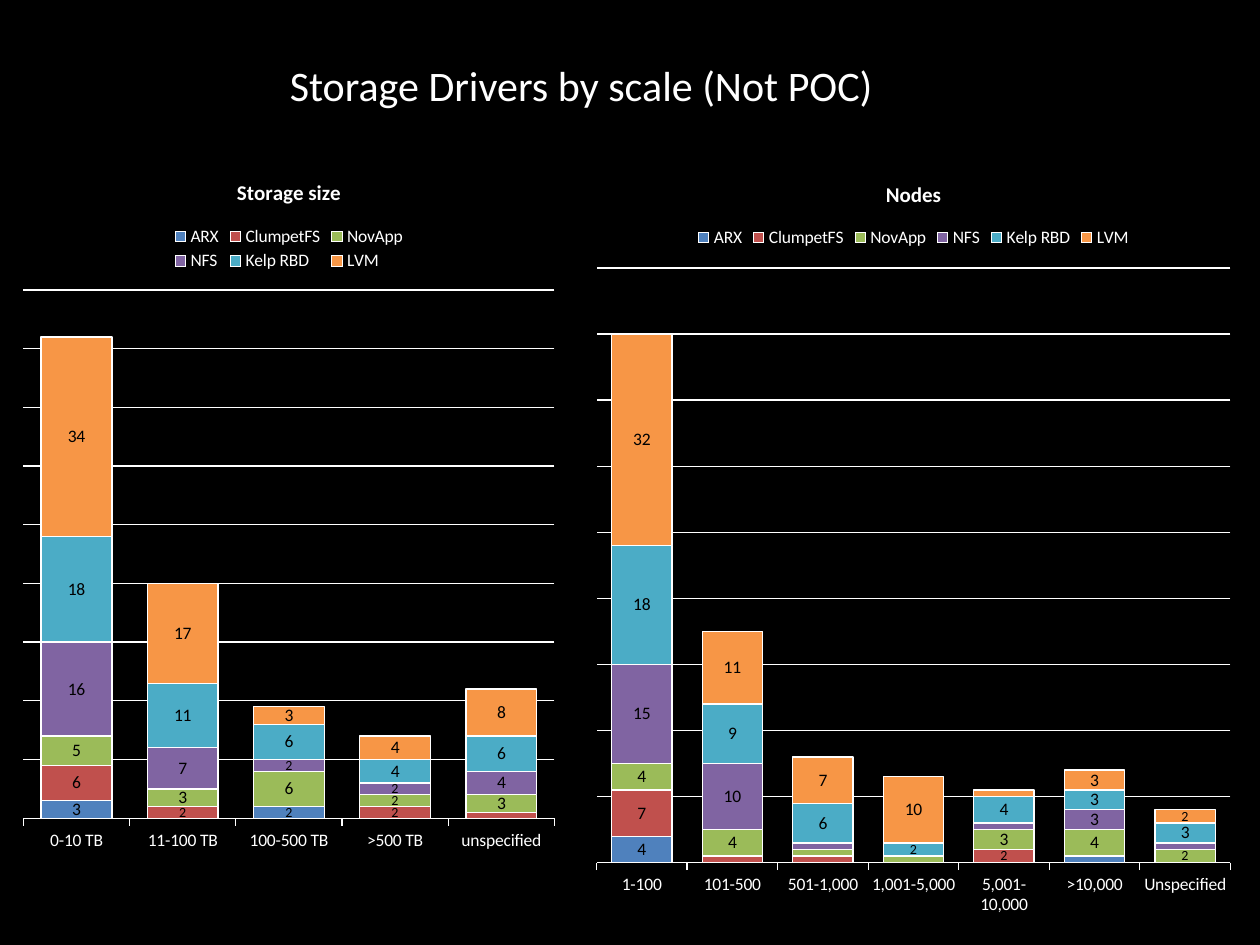
from lxml import etree
from pptx import Presentation
from pptx import util as u
from pptx.chart.data import CategoryChartData
from pptx.dml.color import RGBColor
from pptx.enum import chart as charts, text
from pptx.oxml.ns import qn

BLACK = RGBColor(0x00, 0x00, 0x00)
WHITE = RGBColor(0xFF, 0xFF, 0xFF)
FONT = "Calibri"
DRIVERS = {
    "ARX": RGBColor(0x4F, 0x81, 0xBD),
    "ClumpetFS": RGBColor(0xC0, 0x50, 0x4D),
    "NovApp": RGBColor(0x9B, 0xBB, 0x59),
    "NFS": RGBColor(0x80, 0x64, 0xA2),
    "Kelp RBD": RGBColor(0x4B, 0xAC, 0xC6),
    "LVM": RGBColor(0xF7, 0x96, 0x46),
}
STORAGE = {
    "0-10 TB": (3, 6, 5, 16, 18, 34),
    "11-100 TB": (None, 2, 3, 7, 11, 17),
    "100-500 TB": (2, None, 6, 2, 6, 3),
    ">500 TB": (None, 2, 2, 2, 4, 4),
    "unspecified": (None, 1, 3, 4, 6, 8),
}
NODES = {
    "1-100": (4, 7, 4, 15, 18, 32),
    "101-500": (None, 1, 4, 10, 9, 11),
    "501-1,000": (None, 1, 1, 1, 6, 7),
    "1,001-5,000": (None, None, 1, None, 2, 10),
    "5,001-10,000": (None, 2, 3, 1, 4, 1),
    ">10,000": (1, None, 4, 3, 3, 3),
    "Unspecified": (None, None, 2, 1, 3, 2),
}


def style_font(font, size, color, bold=False):
    """Apply the slide's typeface with a size, colour and weight."""
    font.name, font.size, font.bold = FONT, u.Pt(size), bold
    font.color.rgb = color


def style_line(line, width=0.75):
    """Make a line solid white."""
    line.color.rgb = WHITE
    line.width = u.Pt(width)


def set_title(page, words):
    """Place and format the title placeholder."""
    box = page.shapes.title
    box.left, box.top, box.width, box.height = (
        u.Cm(5.49), u.Cm(1.07), u.Cm(12.45), u.Cm(1.27))
    frame = box.text_frame
    frame.word_wrap = False
    frame.auto_size = text.MSO_AUTO_SIZE.SHAPE_TO_FIT_TEXT
    frame.vertical_anchor = text.MSO_ANCHOR.TOP
    para = frame.paragraphs[0]
    para.alignment = text.PP_ALIGN.CENTER
    span = para.add_run()
    span.text = words
    style_font(span.font, 24, WHITE)


def hide_label(series, index):
    """Delete the label of one point."""
    style_font(series.points[index].data_label.font, 10, BLACK)
    label = series._element.xpath(f"c:dLbls/c:dLbl[c:idx/@val='{index}']")[0]
    for child in label[1:]:
        label.remove(child)
    etree.SubElement(label, qn("c:delete")).set("val", "1")


def style_series(series):
    """Colour a series, with small labels for twos and none for ones."""
    series.format.fill.solid()
    series.format.fill.fore_color.rgb = DRIVERS[series.name]
    style_line(series.format.line)
    series.data_labels.show_value = True
    style_font(series.data_labels.font, 10, BLACK)
    for index, value in enumerate(series.values):
        if value == 1:
            hide_label(series, index)
        elif value == 2:
            style_font(series.points[index].data_label.font, 8, BLACK)


def style_axes(chart):
    """Show categories and white gridlines, and hide the value axis."""
    values, categories = chart.value_axis, chart.category_axis
    values.minimum_scale, values.maximum_scale, values.major_unit = 0, 90, 10
    values.has_major_gridlines = True
    style_line(values.major_gridlines.format.line)
    values.visible = False
    categories.major_tick_mark = charts.XL_TICK_MARK.OUTSIDE
    style_line(categories.format.line)
    style_font(categories.tick_labels.font, 10, WHITE)


def add_stacked_chart(page, heading, table, left, width, height):
    """Add a stacked column chart of drivers by category."""
    data = CategoryChartData()
    data.categories = list(table)
    for name, values in zip(DRIVERS, zip(*table.values())):
        data.add_series(name, values)
    chart = page.shapes.add_chart(
        charts.XL_CHART_TYPE.COLUMN_STACKED,
        u.Cm(left), u.Cm(3.1), u.Cm(width), u.Cm(height), data).chart
    style_font(chart.font, 10, WHITE)
    chart.has_title = True
    span = chart.chart_title.text_frame.paragraphs[0].add_run()
    span.text = heading
    style_font(span.font, 12, WHITE, bold=True)
    chart.has_legend = True
    chart.legend.position = charts.XL_LEGEND_POSITION.TOP
    chart.legend.include_in_layout = False
    style_font(chart.legend.font, 10, WHITE)
    plot = chart.plots[0]
    plot.gap_width, plot.overlap, plot.vary_by_categories = 50, 100, False
    for series in plot.series:
        style_series(series)
    style_axes(chart)


def main():
    """Build the slide and save the deck."""
    deck = Presentation()
    deck.slide_width, deck.slide_height = u.Cm(25.4), u.Cm(19.05)
    page = deck.slides.add_slide(deck.slide_layouts[5])
    page.background.fill.solid()
    page.background.fill.fore_color.rgb = BLACK
    set_title(page, "Storage Drivers by scale (Not POC)")
    add_stacked_chart(page, "Storage size", STORAGE, 0.25, 11.15, 14.33)
    add_stacked_chart(page, "Nodes", NODES, 11.76, 13.31, 15.65)
    deck.save("out.pptx")


if __name__ == "__main__":
    main()
